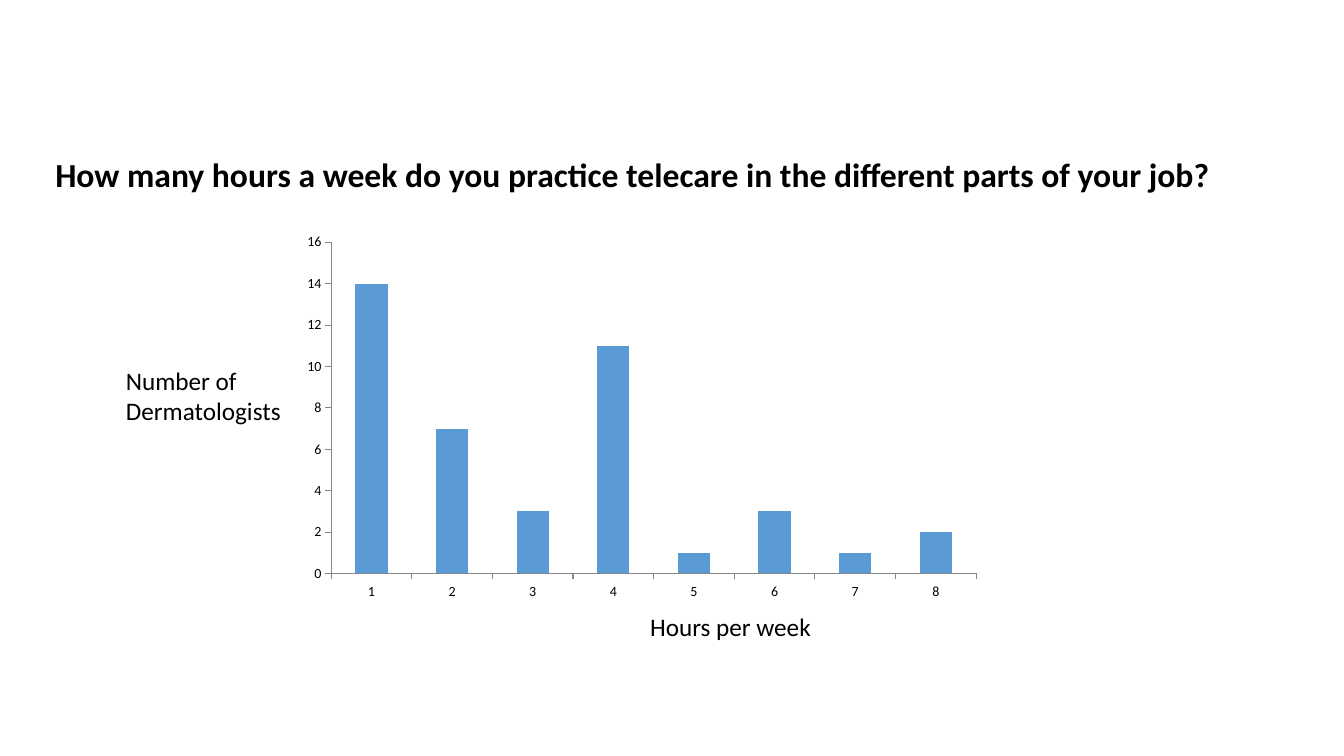
from pptx import Presentation
from pptx.chart.data import CategoryChartData
from pptx.dml.color import RGBColor
from pptx.enum.chart import XL_CHART_TYPE as ChartType, XL_TICK_MARK as TickMark
from pptx.util import Emu, Pt

PX = 9144  # EMU per px, 100 px to the inch
FONT = "Calibri"
BLACK = RGBColor(0x00, 0x00, 0x00)
BLUE = RGBColor(0x5B, 0x9B, 0xD5)
GREY = RGBColor(0x86, 0x86, 0x86)

DERMATOLOGISTS_BY_HOURS = {1: 14, 2: 7, 3: 3, 4: 11, 5: 1, 6: 3, 7: 1, 8: 2}


def to_emu(box):
    return [Emu(length * PX) for length in box]


def add_text(slide, box, text, size=18, bold=False, color=BLACK):
    frame = slide.shapes.add_textbox(*to_emu(box)).text_frame
    frame.word_wrap = True
    run = frame.paragraphs[0].add_run()
    run.text = text
    run.font.name = FONT
    run.font.size = Pt(size)
    run.font.bold = bold
    run.font.color.rgb = color


def add_hours_chart(slide, box):
    data = CategoryChartData()
    data.categories = [str(hours) for hours in DERMATOLOGISTS_BY_HOURS]
    data.add_series("Series 1", DERMATOLOGISTS_BY_HOURS.values())
    chart = slide.shapes.add_chart(
        ChartType.COLUMN_CLUSTERED, *to_emu(box), data).chart
    chart.has_title = False
    chart.has_legend = False
    chart.font.name = FONT
    chart.font.size = Pt(10)
    chart.font.color.rgb = BLACK

    # Columns
    plot = chart.plots[0]
    plot.gap_width = 150
    plot.vary_by_categories = False
    fill = plot.series[0].format.fill
    fill.solid()
    fill.fore_color.rgb = BLUE

    # Axes
    for axis in (chart.category_axis, chart.value_axis):
        axis.has_major_gridlines = False
        axis.major_tick_mark = TickMark.OUTSIDE
        axis.minor_tick_mark = TickMark.NONE
        axis.format.line.color.rgb = GREY
        axis.format.line.width = Pt(0.75)
    chart.value_axis.minimum_scale = 0
    chart.value_axis.maximum_scale = 16
    chart.value_axis.major_unit = 2


def add_survey_figure(slide, box):
    """Chart with its axis captions to the left and below."""
    left, top, width, height = box
    add_hours_chart(slide, box)
    add_text(slide, (left - 176, top + 132, 179, 71), "Number of Dermatologists")
    add_text(slide, (left + 344, top + height, 236, 40), "Hours per week")


def main():
    presentation = Presentation()
    presentation.slide_width, presentation.slide_height = to_emu((1333, 750))
    slide = presentation.slides.add_slide(presentation.slide_layouts[6])

    # Question
    add_text(slide, (45, 148, 1189, 51),
             "How many hours a week do you practice telecare "
             "in the different parts of your job?", size=24, bold=True)

    # Answers
    add_survey_figure(slide, (291, 225, 691, 377))
    presentation.save("out.pptx")


if __name__ == "__main__":
    main()
